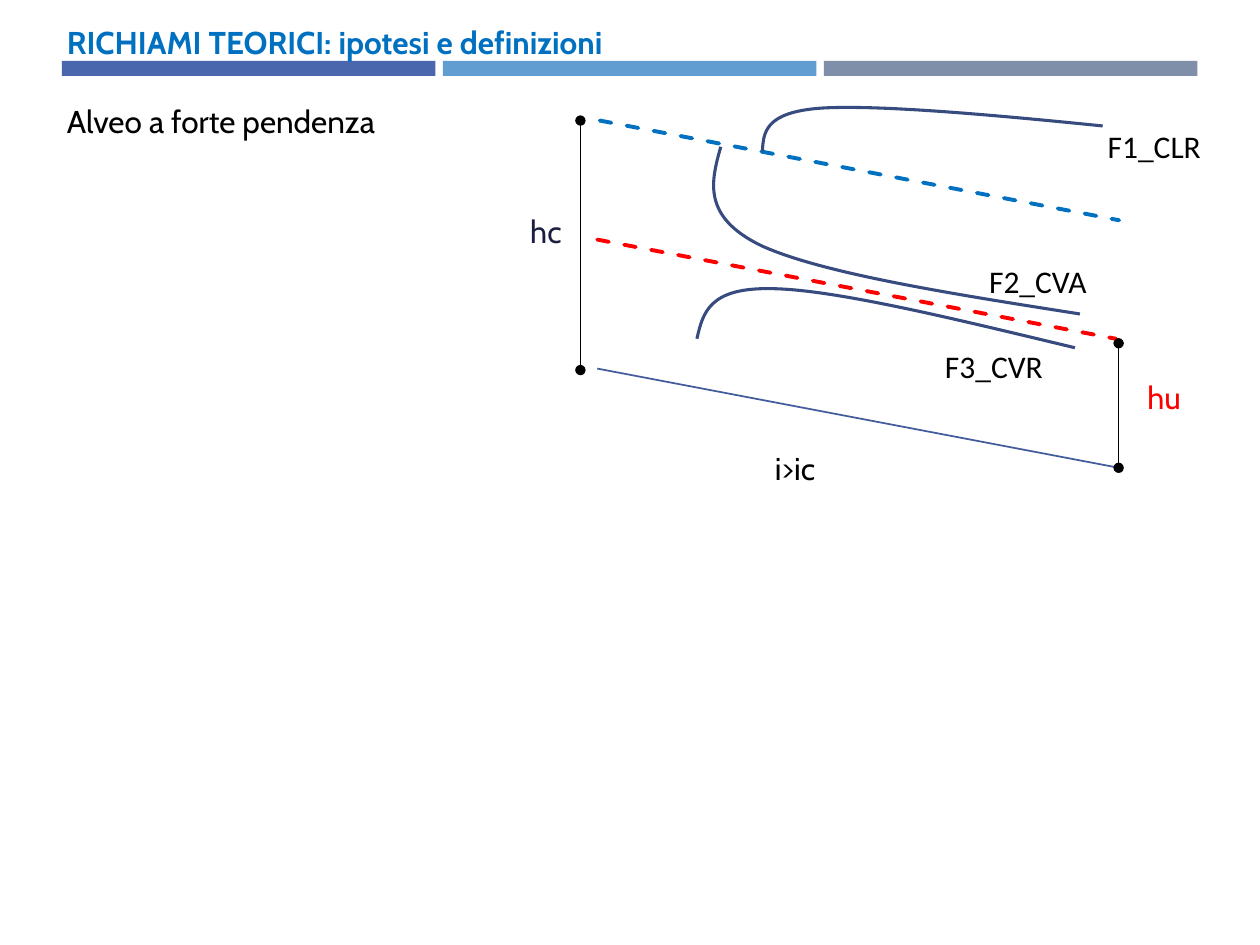
from lxml.etree import SubElement
from pptx import Presentation
from pptx.dml.color import RGBColor
from pptx.enum.dml import MSO_LINE_DASH_STYLE as Dash
from pptx.enum.shapes import MSO_CONNECTOR_TYPE as Connector, MSO_SHAPE as Shape
from pptx.enum.text import MSO_AUTO_SIZE as AutoSize
from pptx.oxml.ns import qn
from pptx.util import Cm, Pt

BLACK = RGBColor(0x00, 0x00, 0x00)
RED = RGBColor(0xFF, 0x00, 0x00)
BLUE = RGBColor(0x00, 0x70, 0xC0)
NAVY = RGBColor(0x1B, 0x1E, 0x3E)
BED_BLUE = RGBColor(0x43, 0x5C, 0x9B)
PROFILE_BLUE = RGBColor(0x37, 0x4B, 0x7F)
BAR_COLORS = (
    RGBColor(0x4A, 0x66, 0xAC),
    RGBColor(0x62, 0x9D, 0xD1),
    RGBColor(0x7F, 0x8F, 0xA9),
)

BAR_LEFT, BAR_TOP, BAR_WIDTH, BAR_HEIGHT, BAR_PITCH = 1.25, 1.23, 7.53, 0.3, 7.68
CURVE_STEPS = 24

# Water surface profiles: a start point, then three points per Bézier segment
PROFILES = (
    ((22.23, 2.54), (19.96, 2.31), (17.7, 2.11), (16.56, 2.18),
     (15.42, 2.26), (15.39, 2.67), (15.37, 3.05)),
    ((21.77, 6.33), (19.15, 5.92), (16.56, 5.51), (15.34, 4.95),
     (14.15, 4.37), (14.33, 3.66), (14.53, 2.96)),
    ((21.67, 7.01), (19.25, 6.43), (16.84, 5.84), (15.57, 5.82),
     (14.3, 5.79), (14.17, 6.3), (14.05, 6.83)),
)


def curve_extent(points):
    """Return the lowest and highest corner reached by a Bézier chain."""
    reached = []
    for first in range(0, len(points) - 1, 3):
        for step in range(CURVE_STEPS + 1):
            t = step / CURVE_STEPS
            weights = ((1 - t) ** 3, 3 * t * (1 - t) ** 2, 3 * t * t * (1 - t), t ** 3)
            reached.append([
                sum(weight * value for weight, value in zip(weights, axis))
                for axis in zip(*points[first:first + 4])
            ])
    axes = list(zip(*reached))
    return [[Cm(pick(axis)) for axis in axes] for pick in (min, max)]


def apply_format(target, values):
    for name, value in values.items():
        setattr(target, name, value)


class Sketch:
    """Holds the text style and the slide being drawn."""

    font = {"name": "Cabin", "size": Pt(18), "bold": False}
    frame = {"word_wrap": True, "auto_size": AutoSize.SHAPE_TO_FIT_TEXT}
    text_height = 1.02

    def __init__(self, page):
        self.shapes = page.shapes

    def bar(self, left, color):
        bar = self.shapes.add_shape(
            Shape.RECTANGLE, Cm(left), Cm(BAR_TOP), Cm(BAR_WIDTH), Cm(BAR_HEIGHT))
        bar.shadow.inherit = False
        bar.fill.solid()
        bar.fill.fore_color.rgb = color
        bar.line.fill.background()

    def text(self, words, left, top, width, color=BLACK, **font):
        box = self.shapes.add_textbox(
            Cm(left), Cm(top), Cm(width), Cm(self.text_height))
        apply_format(box.text_frame, self.frame)
        span = box.text_frame.paragraphs[0].add_run()
        span.text = words
        apply_format(span.font, {**self.font, **font})
        span.font.color.rgb = color

    def line(self, start, end, color, width=1, dash=None, ends=None):
        line = self.shapes.add_connector(
            Connector.STRAIGHT, *(Cm(value) for value in start + end))
        line.line.color.rgb = color
        apply_format(line.line, {"width": Pt(width), "dash_style": dash})
        outline = line.line._get_or_add_ln()
        if dash:
            outline.set("cap", "rnd")
        if ends:
            for tag in ("a:headEnd", "a:tailEnd"):
                SubElement(outline, qn(tag), type=ends)
        SubElement(line._element.spPr, qn("a:effectLst"))

    def curve(self, points):
        """Draw a chain of cubic Bézier segments as one open outline."""
        (left, top), corner = curve_extent(points)
        builder = self.shapes.build_freeform(left, top)
        builder.add_line_segments([corner], close=False)
        curve = builder.convert_to_shape()
        outline = next(curve._element.iter(qn("a:path")))
        for command in list(outline):
            outline.remove(command)
        commands = [("a:moveTo", points[:1])]
        commands += [("a:cubicBezTo", points[first:first + 3])
                     for first in range(1, len(points), 3)]
        for tag, group in commands:
            command = SubElement(outline, qn(tag))
            for x, y in group:
                SubElement(command, qn("a:pt"), x=str(Cm(x) - left), y=str(Cm(y) - top))
        curve.shadow.inherit = False
        curve.fill.background()
        curve.line.color.rgb = PROFILE_BLUE
        curve.line.width = Pt(1.75)


def main():
    deck = Presentation()
    apply_format(deck, {"slide_width": Cm(25.4), "slide_height": Cm(19.05)})
    sketch = Sketch(deck.slides.add_slide(deck.slide_layouts[6]))

    for index, color in enumerate(BAR_COLORS):
        sketch.bar(BAR_LEFT + index * BAR_PITCH, color)
    sketch.text("RICHIAMI TEORICI: ipotesi e definizioni", 1.1, 0.34, 15.39,
                BLUE, bold=True)
    sketch.text("Alveo a forte pendenza", 1.1, 1.93, 11.2)

    # Channel bed, uniform depth and critical depth
    sketch.line((12.04, 7.43), (22.5, 9.42), BED_BLUE)
    sketch.line((12.04, 4.83), (22.5, 6.83), RED, 2.25, Dash.DASH)
    sketch.line((12.09, 2.43), (22.56, 4.44), BLUE, 2.25, Dash.DASH)

    # Depth markers
    sketch.line((11.7, 2.43), (11.7, 7.46), BLACK, ends="oval")
    sketch.text("hc", 10.44, 4.14, 3.33, NAVY)
    sketch.line((22.55, 6.92), (22.55, 9.43), BLACK, ends="oval")
    sketch.text("hu", 22.88, 7.49, 3.33, RED)

    for words, left, top, width in (
        ("F1_CLR", 22.08, 2.44, 3.43),
        ("F2_CVA", 19.69, 5.16, 3.43),
        ("F3_CVR", 18.8, 6.87, 2.84),
    ):
        sketch.text(words, left, top, width, name="Calibri")
    for profile in PROFILES:
        sketch.curve(profile)
    sketch.text("i>ic", 15.37, 8.92, 3.12)

    deck.save("out.pptx")


if __name__ == "__main__":
    main()
